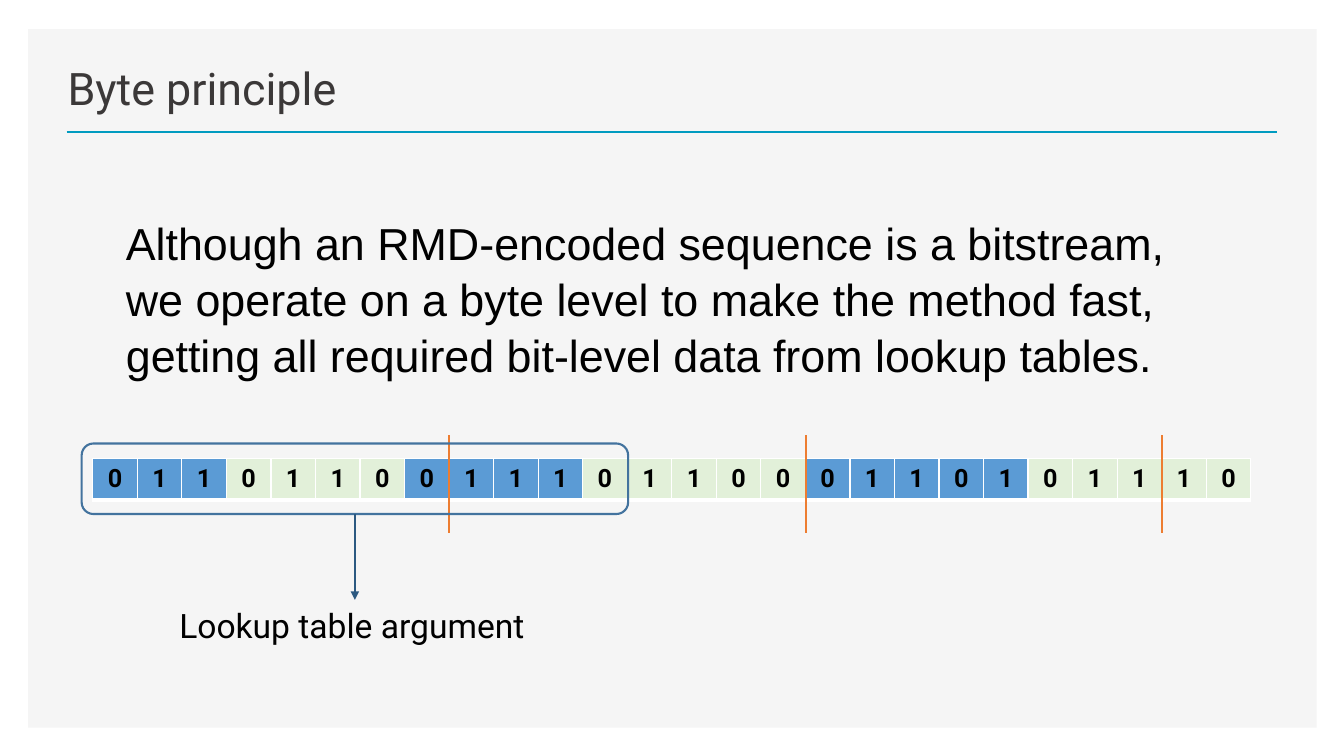
from lxml import etree
from pptx import Presentation
from pptx.dml.color import RGBColor
from pptx.enum.shapes import MSO_CONNECTOR, MSO_SHAPE
from pptx.enum.text import MSO_ANCHOR, PP_ALIGN
from pptx.oxml.ns import qn
from pptx.util import Inches, Pt

STRAIGHT = MSO_CONNECTOR.STRAIGHT
RECTANGLE = MSO_SHAPE.RECTANGLE
ROUNDED = MSO_SHAPE.ROUNDED_RECTANGLE
LEFT, CENTER = PP_ALIGN.LEFT, PP_ALIGN.CENTER
TOP, BOTTOM = MSO_ANCHOR.TOP, MSO_ANCHOR.BOTTOM

BLACK = "000000"
CODEWORDS = ["011", "0110", "0111", "01100", "01101", "01110"]
CODEWORD_FILLS = ["5B9BD5", "E2F0D9"]
BITS_PER_BYTE = 8
CELL_BORDERS = {"a:lnL": 1, "a:lnR": 1, "a:lnT": 1, "a:lnB": 3}


def color(value):
    return RGBColor.from_string(value)


def place(shape, box):
    shape.left, shape.top, shape.width, shape.height = [Inches(n) for n in box]


def write(frame, text, size, font, ink=BLACK, bold=False, align=LEFT):
    para = frame.paragraphs[0]
    para.alignment = align
    span = para.add_run()
    span.text = text
    span.font.size = Pt(size)
    span.font.name = font
    span.font.bold = bold
    span.font.color.rgb = color(ink)
    return para


def add_line(page, start, end, ink, width, arrow=False):
    points = [Inches(n) for n in (*start, *end)]
    line = page.shapes.add_connector(STRAIGHT, *points)
    line.line.color.rgb = color(ink)
    line.line.width = Pt(width)
    if arrow:
        outline = line.line._get_or_add_ln()
        etree.SubElement(outline, qn("a:tailEnd"), type="triangle")
    etree.SubElement(line.element.spPr, qn("a:effectLst"))


def add_panel(page, box):
    panel = page.shapes.add_shape(RECTANGLE, *[Inches(n) for n in box])
    panel.shadow.inherit = False
    panel.fill.solid()
    panel.fill.fore_color.rgb = color("F5F5F5")
    panel.line.fill.background()
    page.shapes.title.element.addprevious(panel.element)


def add_heading(page, box, text):
    left, top, width, height = box
    title = page.shapes.title
    place(title, box)
    title.text_frame.vertical_anchor = BOTTOM
    write(title.text_frame, text, 32, "Roboto", "3B3838")
    rule = top + height + 0.12
    add_line(page, (left + 0.09, rule), (left + width + 0.17, rule), "009BC0", 2)


def add_text(page, box, text, size, font, wrap=True):
    holder = page.shapes.add_textbox(*[Inches(n) for n in box])
    frame = holder.text_frame
    frame.word_wrap = wrap
    frame.vertical_anchor = TOP
    return write(frame, text, size, font)


def add_cell_borders(cell):
    properties = cell._tc.get_or_add_tcPr()
    for index, (tag, width) in enumerate(CELL_BORDERS.items()):
        border = etree.Element(qn(tag), w=str(Pt(width)))
        fill = etree.SubElement(border, qn("a:solidFill"))
        etree.SubElement(fill, qn("a:srgbClr"), val="FFFFFF")
        properties.insert(index, border)


def add_bitstream(page, box):
    left, top, width, height = box
    bits = [
        (bit, CODEWORD_FILLS[index % 2])
        for index, word in enumerate(CODEWORDS)
        for bit in word
    ]
    pitch = width / len(bits)
    lengths = [Inches(n) for n in box]
    table = page.shapes.add_table(1, len(bits), *lengths).table
    for index, (bit, fill) in enumerate(bits):
        table.columns[index].width = Inches(pitch)
        cell = table.cell(0, index)
        cell.fill.solid()
        cell.fill.fore_color.rgb = color(fill)
        write(cell.text_frame, bit, 18, "Roboto", bold=True, align=CENTER)
        add_cell_borders(cell)
    for index in range(BITS_PER_BYTE, len(bits), BITS_PER_BYTE):
        x = left + index * pitch
        add_line(page, (x, top - 0.23), (x, top + height + 0.33), "ED7D31", 1.5)


def add_lookup_argument(page, box, label):
    left, top, width, height = box
    frame = page.shapes.add_shape(ROUNDED, *[Inches(n) for n in box])
    frame.shadow.inherit = False
    frame.fill.background()
    frame.line.color.rgb = color("43739E")
    frame.line.width = Pt(1.5)
    middle, bottom = left + width / 2, top + height
    label_top = bottom + 0.85
    label_box = (middle - 1.84, label_top, 3.68, 0.5)
    add_text(page, label_box, label, 24, "Roboto", wrap=False)
    add_line(page, (middle, bottom), (middle, label_top), "2C5981", 1.5, arrow=True)


def build_byte_principle(deck):
    page = deck.slides.add_slide(deck.slide_layouts[5])
    add_panel(page, (0.28, 0.29, 12.78, 6.93))
    add_heading(page, (0.57, 0.49, 11.93, 0.7), "Byte principle")
    statement = add_text(
        page,
        (1.15, 2.07, 11.03, 1.72),
        "Although an RMD-encoded sequence is a bitstream, "
        "we operate on a byte level to make the method fast, "
        "getting all required bit-level data from lookup tables.",
        32,
        "Arial",
    )
    statement.line_spacing = 1.04
    add_bitstream(page, (0.92, 4.55, 11.49, 0.41))
    add_lookup_argument(page, (0.81, 4.4, 5.42, 0.7), "Lookup table argument")


def main():
    deck = Presentation()
    deck.slide_width = Inches(13.33)
    deck.slide_height = Inches(7.5)
    build_byte_principle(deck)
    deck.save("out.pptx")


if __name__ == "__main__":
    main()
